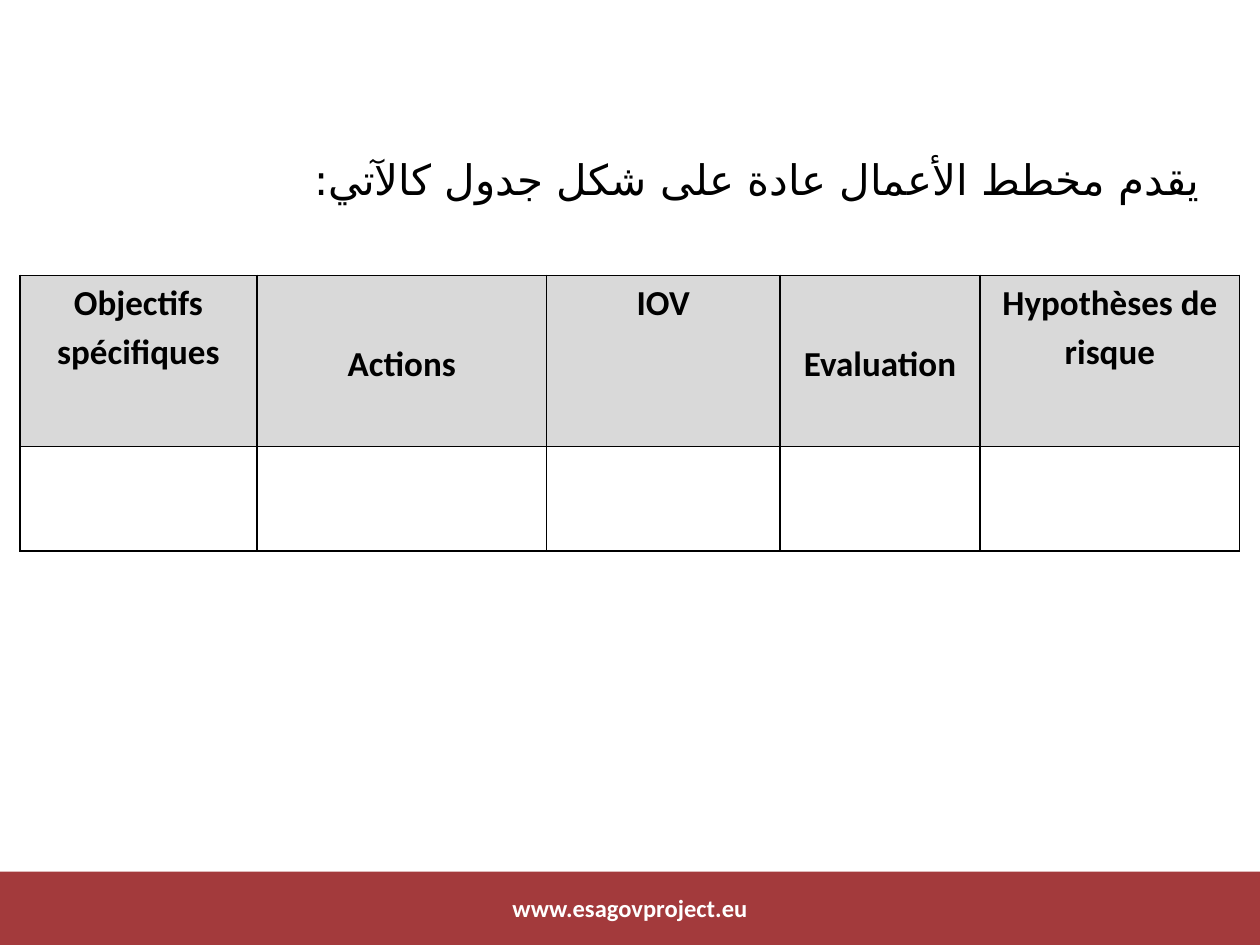
from lxml.etree import SubElement
from pptx import Presentation
from pptx.dml.color import RGBColor
from pptx.enum.shapes import MSO_SHAPE
from pptx.enum.text import MSO_ANCHOR, MSO_AUTO_SIZE, PP_ALIGN
from pptx.oxml import parse_xml
from pptx.oxml.ns import nsdecls, qn
from pptx.util import Cm, Pt

COLORS = {"band": "A33A3C", "header": "D9D9D9", "text": "000000", "light": "FFFFFF"}
LATIN_FONT = "DejaVu Sans Mono"
ARABIC_FONT = "DejaVu Sans"
COLUMNS = [
    ("Objectifs spécifiques", 4.78, MSO_ANCHOR.TOP),
    ("Actions", 5.84, MSO_ANCHOR.MIDDLE),
    ("IOV", 4.7, MSO_ANCHOR.TOP),
    ("Evaluation", 4.04, MSO_ANCHOR.MIDDLE),
    ("Hypothèses de risque", 5.23, MSO_ANCHOR.TOP),
]
ROW_HEIGHTS = [3.45, 2.11]


def color(name):
    return RGBColor.from_string(COLORS[name])


def set_font(paragraph, name, size, color_name, bold=False):
    font = paragraph.font
    font.name, font.size, font.bold = name, Pt(size), bold
    font.color.rgb = color(color_name)


def add_footer(slide, left, top, width, height):
    band = slide.shapes.add_shape(
        MSO_SHAPE.RECTANGLE, Cm(left), Cm(top), Cm(width), Cm(height))
    band.shadow.inherit = False
    band.fill.solid()
    band.fill.fore_color.rgb = color("band")
    band.line.fill.background()

    label_width = 7.82
    label = slide.shapes.add_textbox(
        Cm(left + (width - label_width) / 2), Cm(top + 0.31), Cm(label_width), Cm(0.79))
    frame = label.text_frame
    frame.word_wrap = True
    frame.margin_left = frame.margin_right = Cm(0.13)
    frame.margin_top = frame.margin_bottom = Cm(0.13)
    paragraph = frame.paragraphs[0]
    paragraph.text = "www.esagovproject.eu"
    paragraph.alignment = PP_ALIGN.CENTER
    set_font(paragraph, "Calibri", 14, "light", bold=True)


def fill_introduction(body, left, top, width, height):
    body.left, body.top, body.width, body.height = Cm(left), Cm(top), Cm(width), Cm(height)
    frame = body.text_frame
    frame.auto_size = MSO_AUTO_SIZE.NONE
    paragraph = frame.paragraphs[0]
    paragraph.text = "يقدم مخطط الأعمال عادة على شكل جدول كالآتي:"
    paragraph.alignment = PP_ALIGN.JUSTIFY
    paragraph.line_spacing = 1.2
    paragraph.space_before = Pt(0)
    # Right-to-left, without bullet or indent
    properties = paragraph._p.get_or_add_pPr()
    for key, value in {"rtl": "1", "marL": "0", "marR": "0", "indent": "0"}.items():
        properties.set(key, value)
    SubElement(properties, qn("a:buNone"))
    set_font(paragraph, LATIN_FONT, 24, "text")
    SubElement(properties.find(qn("a:defRPr")), qn("a:cs"), typeface=ARABIC_FONT)


def add_borders(cell):
    properties = cell._tc.get_or_add_tcPr()
    for index, side in enumerate(["lnL", "lnR", "lnT", "lnB"]):
        properties.insert(index, parse_xml(
            f'<a:{side} {nsdecls("a")} w="12700"><a:solidFill>'
            f'<a:srgbClr val="{COLORS["text"]}"/></a:solidFill></a:{side}>'))


def add_plan_table(slide, left, top):
    width = sum(column[1] for column in COLUMNS)
    table = slide.shapes.add_table(
        len(ROW_HEIGHTS), len(COLUMNS),
        Cm(left), Cm(top), Cm(width), Cm(sum(ROW_HEIGHTS))).table
    table.horz_banding = False
    for row, height in zip(table.rows, ROW_HEIGHTS):
        row.height = Cm(height)
    for index, (heading, column_width, anchor) in enumerate(COLUMNS):
        table.columns[index].width = Cm(column_width)
        header, blank = table.cell(0, index), table.cell(1, index)
        for cell in (header, blank):
            add_borders(cell)
            cell.margin_left = cell.margin_right = Cm(0.18)
            cell.margin_top = cell.margin_bottom = 0
        blank.fill.background()
        header.fill.solid()
        header.fill.fore_color.rgb = color("header")
        header.vertical_anchor = anchor
        paragraph = header.text_frame.paragraphs[0]
        paragraph.text = heading
        paragraph.alignment = PP_ALIGN.CENTER
        paragraph.line_spacing = 1.15
        set_font(paragraph, "Calibri", 20, "text", bold=True)


def main():
    presentation = Presentation()
    presentation.slide_width, presentation.slide_height = Cm(25.4), Cm(19.05)
    slide = presentation.slides.add_slide(presentation.slide_layouts[1])
    title = slide.shapes.title._element
    title.getparent().remove(title)

    add_footer(slide, 0, 17.57, 25.4, 1.52)
    fill_introduction(slide.placeholders[1], 0.79, 2.77, 23.65, 2.18)
    add_plan_table(slide, 0.4, 5.55)
    presentation.save("out.pptx")


if __name__ == "__main__":
    main()
